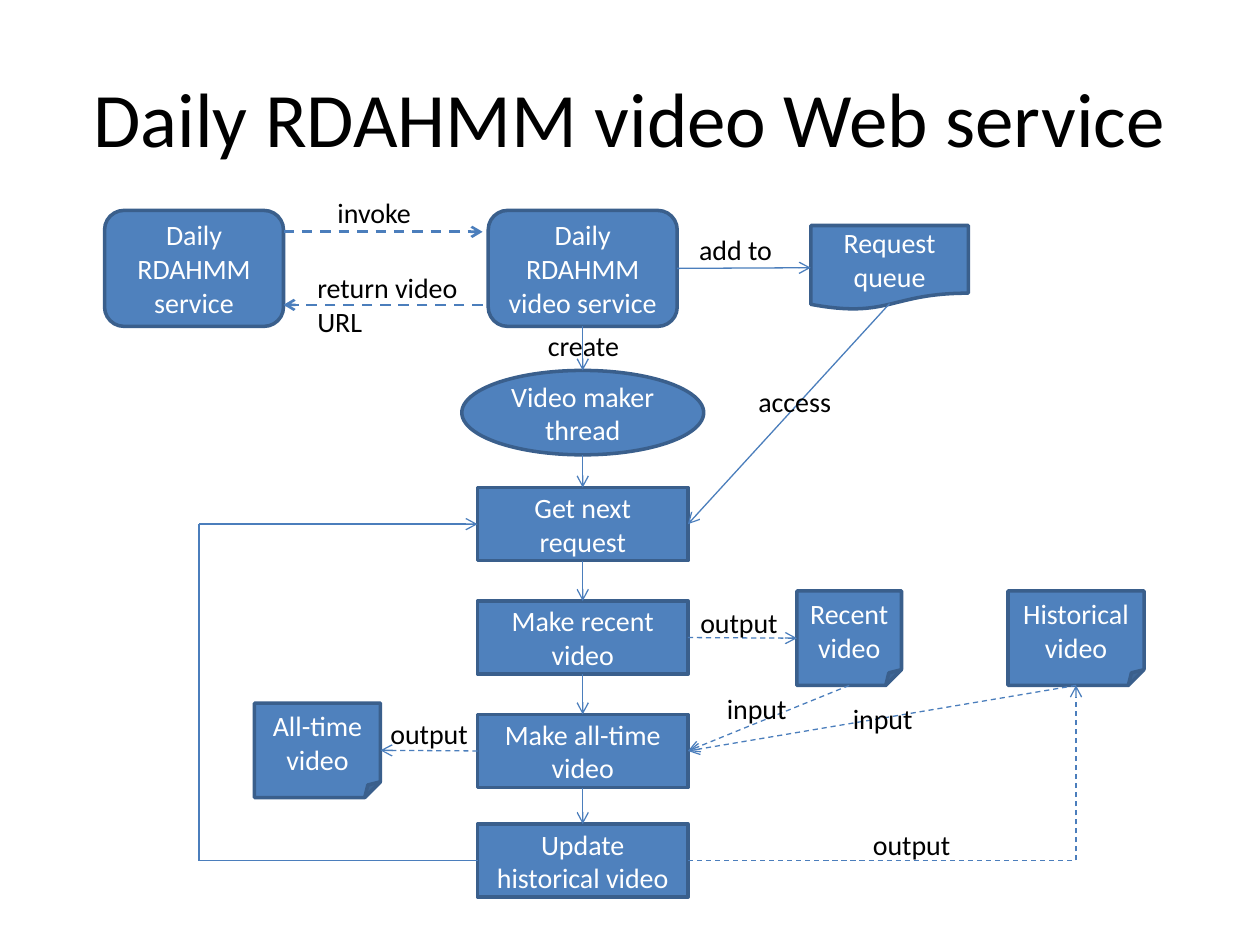
from pptx import Presentation
from pptx import util as u
from pptx.dml.color import RGBColor
from pptx.enum import dml, shapes, text
from pptx.oxml.ns import qn
from lxml import etree

WIDE, HIGH = 10, 7.5
FILL, EDGE, WIRE, INK, PAPER = "4F81BD", "3A5F8C", "4B7EBC", "000000", "FFFFFF"
KIND = shapes.MSO_SHAPE
STEP = KIND.FLOWCHART_PROCESS
NOTE = KIND.FOLDED_CORNER
MID = 4.625  # centre line of the main flow
SIZE = {"step": (1.67, 0.58)}
TITLE = "Daily RDAHMM video Web service"

# name: words, preset, centre x, top, width, height
NODES = {
    "client": ("Daily RDAHMM service", KIND.ROUNDED_RECTANGLE, 1.54, 1.67, 1.42, 0.92),
    "server": ("Daily RDAHMM video service", KIND.ROUNDED_RECTANGLE, MID, 1.67, 1.5, 0.92),
    "queue": ("Request queue", KIND.FLOWCHART_DOCUMENT, 7.06, 1.79, 1.25, 0.67),
    "thread": ("Video maker thread", KIND.OVAL, MID, 2.94, 1.92, 0.67),
    "next": ("Get next request", STEP, MID, 3.87, *SIZE["step"]),
    "make": ("Make recent video", STEP, MID, 4.77, *SIZE["step"]),
    "all": ("Make all-time video", STEP, MID, 5.67, *SIZE["step"]),
    "update": ("Update historical video", STEP, MID, 6.54, *SIZE["step"]),
    "recent": ("Recent video", NOTE, 6.74, 4.69, 0.83, 0.75),
    "past": ("Historical video", NOTE, 8.54, 4.69, 1.08, 0.75),
    "total": ("All-time video", NOTE, 2.52, 5.58, 1, 0.75),
}

FLOW = ["server", "thread", "next", "make", "all", "update"]
LOOP = 1.58  # x of the line that leads back to the next request

# from, to (a node and its side, or a point), format
LINKS = [
    ((2.25, 1.84), (3.83, 1.84), dict(dash=True, width=1.5)),
    ((3.83, 2.42), (2.25, 2.42), dict(dash=True, width=1.5)),
    (("server", "right"), ("queue", "left"), {}),
    ((7.06, 2.41), ("next", "right"), {}),
    (("make", "right"), ("recent", "left"), dict(dash=True)),
    (("recent", "bottom"), ("all", "right"), dict(dash=True)),
    (("past", "bottom"), ("all", "right"), dict(dash=True)),
    (("all", "left"), ("total", "right"), dict(dash=True)),
    (("update", "right"), ("past", "bottom"), dict(dash=True, bent=True)),
    (("update", "left"), (LOOP, 6.83), dict(arrow=False)),
    ((LOOP, 4.16), (LOOP, 6.83), dict(arrow=False)),
    ((LOOP, 4.16), ("next", "left"), {}),
]

# words, left, top, width, height
LABELS = [
    ("invoke", 2.58, 1.5, 0.92, 0.37),
    ("return video URL", 2.42, 2.1, 1.42, 0.64),
    *[(word, x, y, 0.83, 0.37) for word, x, y in [
        ("add to", 5.45, 1.8), ("create", 4.25, 2.56), ("access", 5.92, 3),
        ("output", 5.46, 4.76), ("input", 5.67, 5.44), ("input", 6.67, 5.52),
        ("output", 6.83, 6.52), ("output", 3, 5.64)]],
]


def rgb(code):
    return RGBColor.from_string(code)


def write(shape, words, size=16, color=INK, align="LEFT", anchor="TOP"):
    frame = shape.text_frame
    frame.word_wrap = True
    frame.vertical_anchor = getattr(text.MSO_ANCHOR, anchor)
    para = frame.paragraphs[0]
    para.alignment = getattr(text.PP_ALIGN, align)
    run = para.add_run()
    run.text = words
    run.font.name, run.font.size = "Calibri", u.Pt(size)
    run.font.color.rgb = rgb(color)


def label(slide, words, *box, **style):
    write(slide.shapes.add_textbox(*map(u.Inches, box)), words, **style)


def node(slide, words, kind, mid, top, wide, high):
    box = (mid - wide / 2, top, wide, high)
    shape = slide.shapes.add_shape(kind, *map(u.Inches, box))
    shape.shadow.inherit = False
    shape.fill.solid()
    shape.fill.fore_color.rgb = rgb(FILL)
    shape.line.color.rgb = rgb(EDGE)
    shape.line.width = u.Pt(2)
    write(shape, words, color=PAPER, align="CENTER", anchor="MIDDLE")


def point(end):
    """Turn a node and its side into x and y; leave a point as it is."""
    if end[0] not in NODES:
        return end
    mid, top, wide, high = NODES[end[0]][2:]
    dx, dy = {"left": (-0.5, 0.5), "right": (0.5, 0.5),
              "top": (0, 0), "bottom": (0, 1)}[end[1]]
    return mid + dx * wide, top + dy * high


def link(slide, start, end, dash=False, width=0.75, arrow=True, bent=False):
    kind = shapes.MSO_CONNECTOR.ELBOW if bent else shapes.MSO_CONNECTOR.STRAIGHT
    ends = map(u.Inches, (*point(start), *point(end)))
    wire = slide.shapes.add_connector(kind, *ends)
    wire.line.color.rgb = rgb(WIRE)
    wire.line.width = u.Pt(width)
    if dash:
        wire.line.dash_style = dml.MSO_LINE.DASH
    props = wire._element.spPr
    if bent:  # one corner in place of two
        props.find(qn("a:prstGeom")).set("prst", "bentConnector2")
    if arrow:
        etree.SubElement(props.find(qn("a:ln")), qn("a:tailEnd"), type="arrow")
    etree.SubElement(props, qn("a:effectLst"))


def main():
    deck = Presentation()
    deck.slide_width, deck.slide_height = u.Inches(WIDE), u.Inches(HIGH)
    slide = deck.slides.add_slide(deck.slide_layouts[6])
    label(slide, TITLE, 0.05 * WIDE, 0.04 * HIGH, 0.9 * WIDE, 1.25,
          size=44, align="CENTER", anchor="MIDDLE")
    for item in NODES.values():
        node(slide, *item)
    for one, two in zip(FLOW, FLOW[1:]):
        link(slide, (one, "bottom"), (two, "top"))
    for start, end, style in LINKS:
        link(slide, start, end, **style)
    for item in LABELS:
        label(slide, *item)
    deck.save("out.pptx")


if __name__ == "__main__":
    main()
